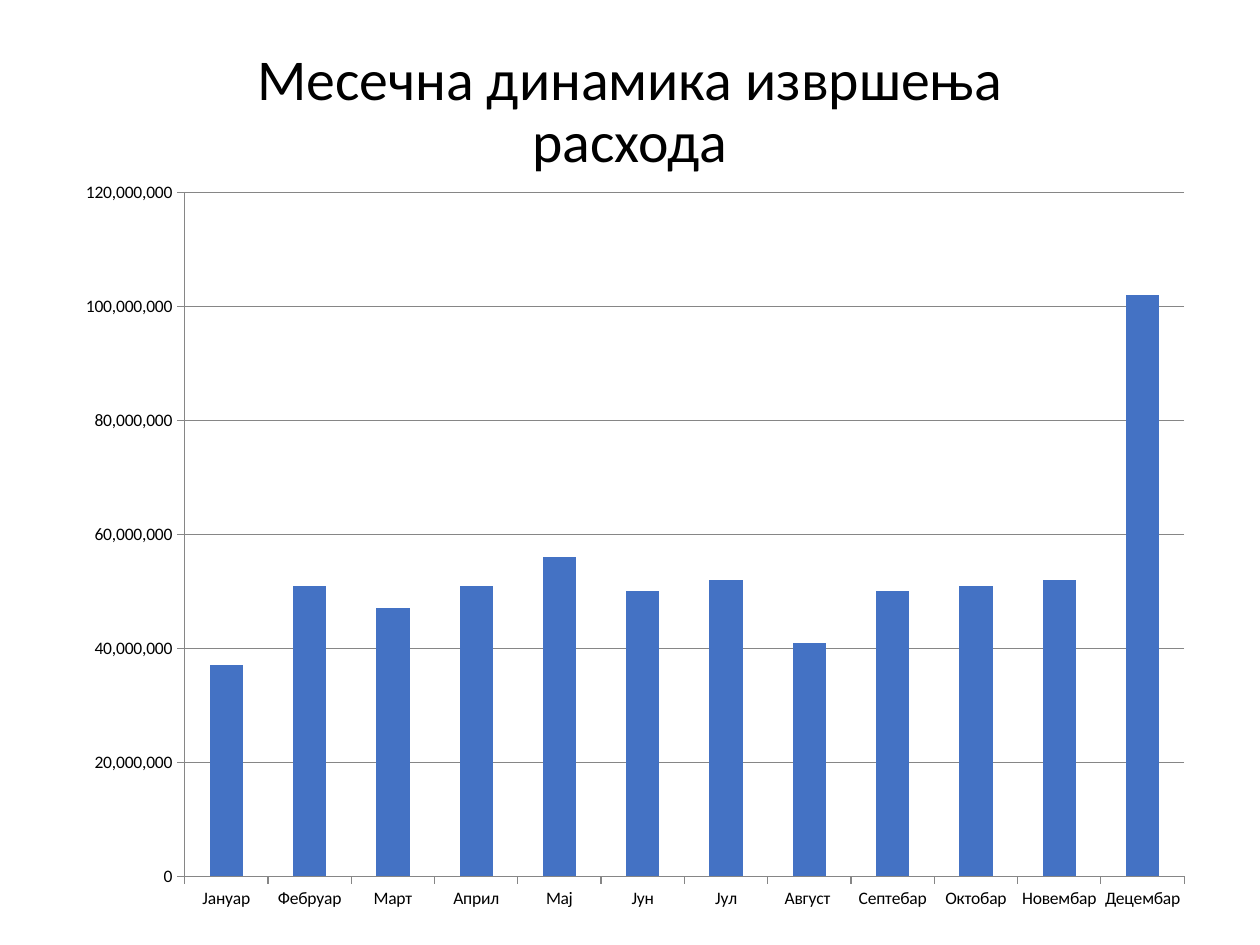
"""Build a slide with a column chart of monthly expenditure."""
from pptx import Presentation
from pptx.chart.data import CategoryChartData
from pptx.dml.color import RGBColor
from pptx.enum.chart import XL_CHART_TYPE, XL_TICK_MARK
from pptx.enum.text import MSO_ANCHOR, MSO_AUTO_SIZE, PP_ALIGN
from pptx.util import Inches, Pt

COLUMNS = XL_CHART_TYPE.COLUMN_CLUSTERED
TICK_OUT, TICK_NONE = XL_TICK_MARK.OUTSIDE, XL_TICK_MARK.NONE
BOTTOM, CENTER = MSO_ANCHOR.BOTTOM, PP_ALIGN.CENTER
NO_FIT = MSO_AUTO_SIZE.NONE

FONT = "Calibri"
BLACK = RGBColor(0x00, 0x00, 0x00)
BLUE = RGBColor(0x44, 0x72, 0xC4)
GRAY = RGBColor(0x86, 0x86, 0x86)

MONTHLY_MILLIONS = {
    "Јануар": 37, "Фебруар": 51, "Март": 47, "Април": 51,
    "Мај": 56, "Јун": 50, "Јул": 52, "Август ": 41,
    "Септебар": 50, "Октобар": 51, "Новембар": 52, "Децембар": 102,
}


def write_text(frame, text, size, color, align, anchor, spacing):
    frame.word_wrap = True
    frame.auto_size = NO_FIT
    frame.vertical_anchor = anchor
    para = frame.paragraphs[0]
    para.alignment = align
    para.line_spacing = spacing
    span = para.add_run()
    span.text = text
    span.font.name = FONT
    span.font.size = Pt(size)
    span.font.color.rgb = color


deck = Presentation()
deck.slide_width, deck.slide_height = Inches(10), Inches(7.5)
page = deck.slides.add_slide(deck.slide_layouts[5])

title = page.shapes.title
title.left, title.top = Inches(1.25), Inches(0.92)
title.width, title.height = Inches(7.5), Inches(0.52)
write_text(title.text_frame, "Месечна динамика извршења расхода", size=33,
           color=BLACK, align=CENTER, anchor=BOTTOM, spacing=0.9)

data = CategoryChartData(number_format="#,##0")
data.categories = list(MONTHLY_MILLIONS)
data.add_series("Series 1", [value * 1_000_000 for value in MONTHLY_MILLIONS.values()])
chart = page.shapes.add_chart(
    COLUMNS, Inches(0.5), Inches(1.33), Inches(9.08), Inches(6), data).chart
chart.has_title = False
chart.has_legend = False
chart.font.name = FONT
chart.font.size = Pt(10)
chart.font.color.rgb = BLACK

plot = chart.plots[0]
plot.gap_width = 150
plot.vary_by_categories = False
fill = plot.series[0].format.fill
fill.solid()
fill.fore_color.rgb = BLUE

for axis in (chart.category_axis, chart.value_axis):
    axis.major_tick_mark = TICK_OUT
    axis.minor_tick_mark = TICK_NONE
    axis.format.line.color.rgb = GRAY
    axis.format.line.width = Pt(0.75)

amounts = chart.value_axis
amounts.minimum_scale = 0
amounts.maximum_scale = 120_000_000
amounts.major_unit = 20_000_000
amounts.tick_labels.number_format = "#,##0"
amounts.tick_labels.number_format_is_linked = False
amounts.has_major_gridlines = True
amounts.major_gridlines.format.line.color.rgb = GRAY
amounts.major_gridlines.format.line.width = Pt(0.75)

deck.save("out.pptx")
